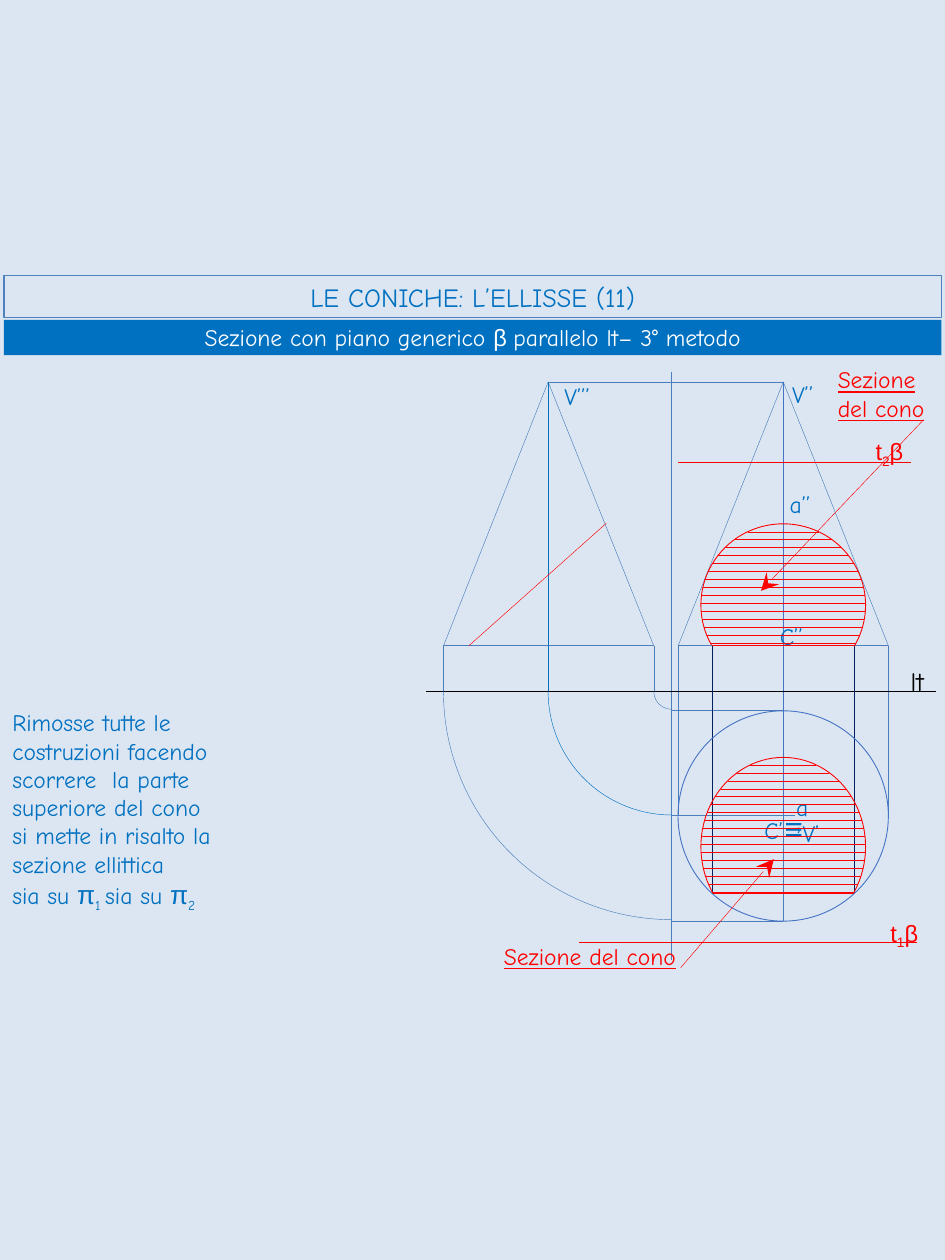
from dataclasses import dataclass
from math import sqrt

from lxml import etree
from pptx import Presentation
from pptx import util as u
from pptx.dml.color import RGBColor
from pptx.enum import dml, shapes, text
from pptx.oxml.ns import qn


@dataclass(frozen=True)
class Theme:
    background: str = "DCE6F2"
    blue: str = "0070C0"
    steel: str = "4B7EBC"
    circle: str = "4472C4"
    navy: str = "002060"
    red: str = "FF0000"
    black: str = "000000"
    white: str = "FFFFFF"
    border: str = "4F81BD"
    hand: str = "Comic Neue"
    plain: str = "Arial"
    body: float = 13.5
    large: float = 15
    symbol: float = 18
    thin: float = 0.25
    medium: float = 0.5
    thick: float = 0.75


theme = Theme()
deck = Presentation()
deck.slide_width, deck.slide_height = u.Cm(19.05), u.Cm(25.4)
page = deck.slides.add_slide(deck.slide_layouts[5])
page.background.fill.solid()
page.background.fill.fore_color.rgb = RGBColor.from_string(theme.background)


def draw_line(x1, y1, x2, y2, color=theme.steel, width=theme.thin):
    line = page.shapes.add_connector(
        shapes.MSO_CONNECTOR.STRAIGHT, u.Cm(x1), u.Cm(y1), u.Cm(x2), u.Cm(y2))
    line.line.color.rgb = RGBColor.from_string(color)
    line.line.width = u.Pt(width)
    etree.SubElement(line._element.spPr, qn("a:effectLst"))
    return line


def write(box, paragraphs, color, size=theme.body, font=theme.hand, underline=None, align=None):
    frame = box.text_frame
    frame.word_wrap = True
    for index, parts in enumerate(paragraphs):
        para = frame.paragraphs[0] if index == 0 else frame.add_paragraph()
        para.alignment = align
        para.font.name, para.font.size, para.font.underline = font, u.Pt(size), underline
        para.font.color.rgb = RGBColor.from_string(color)
        for part in parts:
            words, kind = part if isinstance(part, tuple) else (part, "")
            span = para.add_run()
            span.text = words
            if kind == "sub":
                span.font._element.set("baseline", "-25000")
            elif kind:
                span.font.name = theme.plain
                if kind == "greek":
                    span.font.size = u.Pt(theme.large)


title = page.shapes.title
title.left, title.top, title.width, title.height = u.Cm(0.08), u.Cm(5.56), u.Cm(18.9), u.Cm(0.84)
title.line.color.rgb = RGBColor.from_string(theme.border)
title.line.width = u.Pt(theme.thick)
frame = title.text_frame
frame.auto_size = text.MSO_AUTO_SIZE.NONE
frame.vertical_anchor = text.MSO_ANCHOR.TOP
frame.margin_left = frame.margin_right = u.Cm(0.18)
frame.margin_top = frame.margin_bottom = u.Cm(0.1)
write(title, [["LE CONICHE: L’ELLISSE (11)"]], theme.blue, theme.large, align=text.PP_ALIGN.CENTER)

banner = page.shapes.add_shape(
    shapes.MSO_SHAPE.RECTANGLE, u.Cm(0.08), u.Cm(6.45), u.Cm(18.9), u.Cm(0.71))
banner.shadow.inherit = False
banner.fill.solid()
banner.fill.fore_color.rgb = RGBColor.from_string(theme.blue)
banner.line.fill.background()
banner.text_frame.vertical_anchor = text.MSO_ANCHOR.MIDDLE
write(banner, [["Sezione con piano generico ", ("β ", "plain"), "parallelo lt– 3° metodo"]],
      theme.white, align=text.PP_ALIGN.CENTER)

axis, ground, apex, base = 13.54, 13.94, 7.7, 13.02
side_left, side_center, side_right = 8.94, 11.05, 13.18
plan_left, center, plan_right = 13.67, 15.79, 17.91
plan_top, plan_center, plan_bottom = 14.32, 16.43, 18.57
chord_left, chord_right, chord = 14.35, 17.22, 18.01
cut_left, cut_right, cut_top = 9.45, 12.22, 10.55

for ends in [
    (axis, 7.49, axis, 19.35),
    (side_center, apex, center, apex),
    (side_center, apex, side_left, base),
    (side_center, apex, side_right, base),
    (side_left, base, side_left, ground),
    (side_right, base, side_right, ground),
    (center, apex, plan_left, base),
    (center, apex, plan_right, base),
    (plan_left, base, plan_left, plan_center),
    (plan_right, base, plan_right, plan_center),
    (center, plan_center, center, plan_bottom),
    (axis, plan_top, center, plan_top),
    (axis, plan_center, center + 0.24, plan_center),
    (axis, plan_bottom, center, plan_bottom),
]:
    draw_line(*ends)

draw_line(side_left, base, side_right, base, width=theme.medium)
draw_line(plan_left, base, plan_right, base, width=theme.medium)
draw_line(side_center, apex, side_center, ground, theme.blue)
draw_line(center, apex, center, plan_center, theme.circle)
draw_line(8.59, ground, 18.87, ground, theme.black)
draw_line(plan_left, 9.32, 18.36, 9.32, theme.red)
draw_line(11.68, 19, 18.49, 19, theme.red)
draw_line(cut_left, base, cut_right, cut_top, theme.red)
for x in (chord_left, chord_right):
    draw_line(x, base, x, chord, theme.navy)

for words, x, y, width, height, color, size, font in [
    (["C’’"], 15.47, 12.42, 1.04, 0.84, theme.blue, theme.body, theme.hand),
    (["C’"], 15.16, 16.33, 0.89, 0.99, theme.blue, theme.body, theme.hand),
    (["a", ("’", "plain")], 15.8, 15.85, 0.76, 1.42, theme.blue, theme.body, theme.hand),
    (["V’"], 15.93, 16.38, 0.99, 0.99, theme.blue, theme.body, theme.hand),
    (["≡"], 15.57, 16.18, 0.53, 1.02, theme.blue, theme.symbol, theme.plain),
    (["V’’’"], 11.13, 7.57, 1.19, 0.84, theme.blue, theme.body, theme.hand),
    (["V’’"], 15.72, 7.54, 1.04, 0.84, theme.blue, theme.body, theme.hand),
    (["a’’"], 15.67, 9.75, 0.99, 0.84, theme.blue, theme.body, theme.hand),
    (["lt"], 18.11, 13.28, 0.99, 1.09, theme.black, theme.large, theme.hand),
    (["t", ("2", "sub"), "β"], 17.4, 8.69, 1.09, 0.99, theme.red, theme.body, theme.plain),
    (["t", ("1", "sub"), "β"], 17.7, 18.39, 1.09, 0.99, theme.red, theme.body, theme.plain),
]:
    label = page.shapes.add_textbox(u.Cm(x), u.Cm(y), u.Cm(width), u.Cm(height))
    write(label, [words], color, size, font)

for middle, radius, first, count in [(12.2, 1.64, 10.72, 15), (17.07, 1.8, 15.42, 17)]:
    for row in range(count):
        y = first + 0.16 * row
        half = 1.66 * sqrt(1 - ((y - middle) / radius) ** 2)
        draw_line(center - half, y, center + half, y, theme.red)

for y in (base, chord):
    draw_line(chord_left, y, chord_right, y, theme.red, theme.medium)

arcs = [(axis, ground, axis - x, axis - x, 90, 180, color, theme.thin) for x, color in [
    (side_left, theme.steel), (side_center, theme.blue), (side_right, theme.steel)]]
arcs += [
    (center, plan_center + 0.02, 2.12, 2.12, 132.5, 47.5, theme.circle, theme.medium),
    (center, plan_center + 0.02, 2.12, 2.12, 47.5, 132.5, theme.circle, theme.medium),
    (center, 12.2, 1.66, 1.64, 202, 338, theme.red, theme.medium),
    (center, 12.2, 1.66, 1.64, 338, 30, theme.red, theme.medium),
    (center, 12.2, 1.66, 1.64, 151, 202, theme.red, theme.medium),
    (center, 17.07, 1.66, 1.8, 146.5, 33.5, theme.red, theme.medium),
]
for x, y, across, down, start, stop, color, width in arcs:
    arc = page.shapes.add_shape(
        shapes.MSO_SHAPE.ARC, u.Cm(x - across), u.Cm(y - down), u.Cm(2 * across), u.Cm(2 * down))
    arc.shadow.inherit = False
    arc.fill.background()
    arc.line.color.rgb = RGBColor.from_string(color)
    arc.line.width = u.Pt(width)
    arc.adjustments[0], arc.adjustments[1] = start * 0.6, stop * 0.6

note = page.shapes.add_textbox(u.Cm(0), u.Cm(14.15), u.Cm(5.08), u.Cm(4.37))
write(note, [
    ["Rimosse tutte le costruzioni facendo scorrere  la parte superiore del cono"],
    ["si mette in risalto la sezione ellittica"],
    ["sia su ", ("π", "greek"), ("1 ", "sub"), "sia su ", ("π", "greek"), ("2", "sub")],
], theme.blue)

for lines, x, y, width, height in [
    ([["Sezione"], ["del cono"]], 16.64, 7.24, 2.41, 1.42),
    ([["Sezione del cono"]], 9.91, 18.87, 5.08, 0.84),
]:
    caption = page.shapes.add_textbox(u.Cm(x), u.Cm(y), u.Cm(width), u.Cm(height))
    write(caption, lines, theme.red, underline=True)

for ends in [(18.62, 8.46, 15.34, 11.91), (13.72, 19.51, 15.6, 17.32)]:
    pointer = draw_line(*ends, theme.red)
    etree.SubElement(pointer.line._get_or_add_ln(), qn("a:tailEnd"), type="stealth", w="lg", len="lg")

deck.save("out.pptx")
